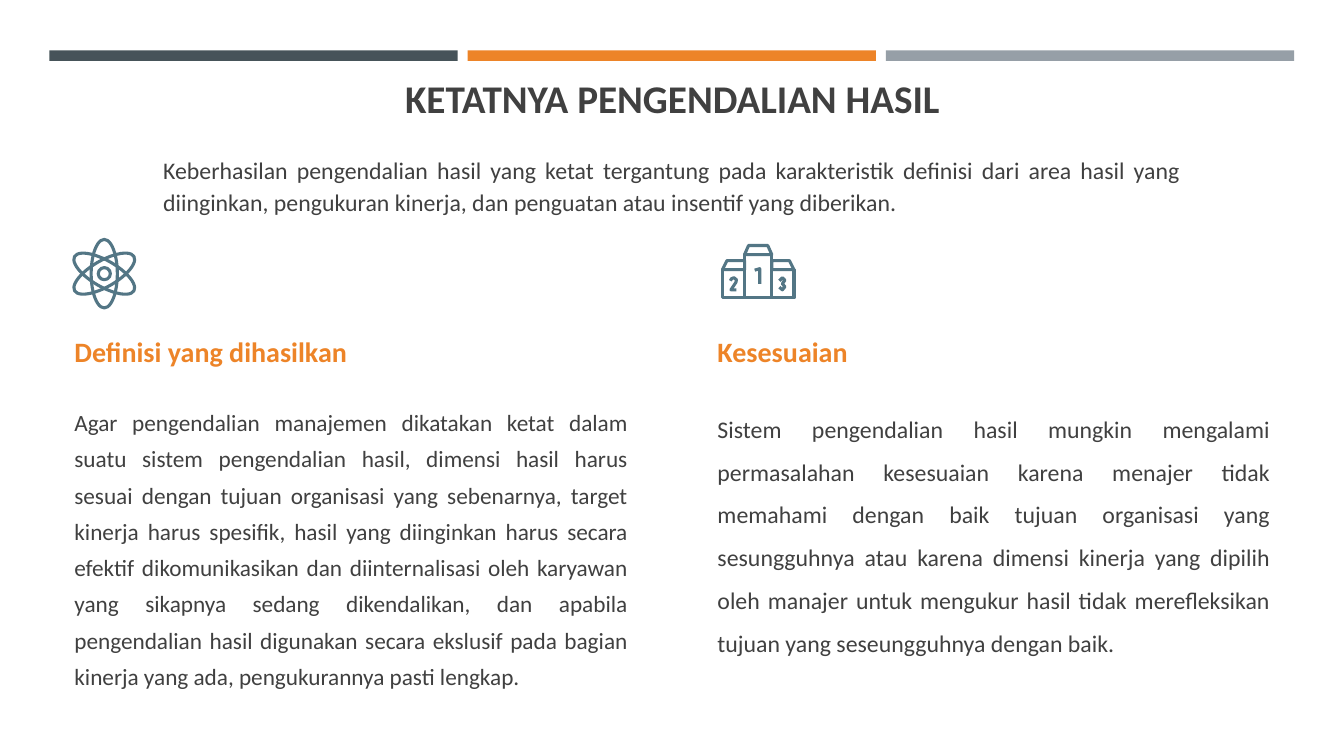
from typing import NamedTuple

from lxml.etree import SubElement
from pptx import Presentation
from pptx.dml.color import RGBColor
from pptx.enum.shapes import MSO_SHAPE as Preset
from pptx.enum.text import MSO_ANCHOR as Anchor, PP_ALIGN as Align
from pptx.oxml.ns import qn
from pptx.shapes.autoshape import Shape
from pptx.shapes.shapetree import GroupShapes, SlideShapes
from pptx.util import Emu, Inches, Pt

SLATE = RGBColor(0x46, 0x53, 0x59)
ORANGE = RGBColor(0xED, 0x84, 0x28)
GREY = RGBColor(0x96, 0x9F, 0xA7)
INK = RGBColor(0x40, 0x40, 0x40)
TEAL = RGBColor(0x53, 0x76, 0x85)

SLIDE_W, SLIDE_H = Inches(13.33), Inches(7.5)
COL, ROW = SLIDE_W / 100, SLIDE_H / 100
ICON_CELL = SLIDE_H / 750
ICON_STROKE = Pt(2.2)

BAR_LEFT, BAR_PITCH, BAR_WIDTH = 3.68, 31.12, 30.38
BAR_TOP, BAR_HEIGHT = 6.67, 1.4
MARGIN, COLUMN_PITCH, COLUMN_WIDTH = 4.8, 47.85, 42.6

HEADING_FORMAT = {"size": Pt(20), "bold": True}
Point = tuple[float, float]


class Area(NamedTuple):
    """A place on the slide, in columns and rows."""
    col: float
    row: float
    cols: float
    rows: float

    def emu(self) -> tuple[Emu, Emu, Emu, Emu]:
        return (Emu(round(self.col * COL)), Emu(round(self.row * ROW)),
                Emu(round(self.cols * COL)), Emu(round(self.rows * ROW)))


class Topic(NamedTuple):
    heading: str
    body: str
    size: float
    spacing: float


class Stroke(NamedTuple):
    """An outline of the podium icon, in icon cells."""
    points: list[Point]
    closed: bool


TOPICS = [
    Topic("Definisi yang dihasilkan",
          "Agar pengendalian manajemen dikatakan ketat dalam suatu sistem "
          "pengendalian hasil, dimensi hasil harus sesuai dengan tujuan organisasi "
          "yang sebenarnya, target kinerja harus spesifik, hasil yang diinginkan "
          "harus secara efektif dikomunikasikan dan diinternalisasi oleh karyawan "
          "yang sikapnya sedang dikendalikan, dan apabila pengendalian hasil "
          "digunakan secara ekslusif pada bagian kinerja yang ada, pengukurannya "
          "pasti lengkap.", 16.6, 1.3),
    Topic("Kesesuaian",
          "Sistem pengendalian hasil mungkin mengalami permasalahan kesesuaian "
          "karena menajer tidak memahami dengan baik tujuan organisasi yang "
          "sesungguhnya atau karena dimensi kinerja yang dipilih oleh manajer untuk "
          "mengukur hasil tidak merefleksikan tujuan yang seseungguhnya dengan baik.",
          17, 1.5),
]
INTRO = ("Keberhasilan pengendalian hasil yang ketat tergantung pada karakteristik "
         "definisi dari area hasil yang diinginkan, pengukuran kinerja, dan penguatan "
         "atau insentif yang diberikan.")


def box(left: float, top: float, right: float, bottom: float) -> Stroke:
    return Stroke([(left, top), (right, top), (right, bottom), (left, bottom)], True)


PODIUM = [
    box(0, 24, 22, 52), box(22, 9, 49, 52), box(49, 24, 71, 52),
    Stroke([(0, 24), (4.5, 15), (22, 15), (22, 24)], True),
    Stroke([(22, 9), (26, 0), (45, 0), (49, 9)], True),
    Stroke([(49, 15), (66.5, 15), (71, 24), (49, 24)], True),
    Stroke([(32, 24.5), (37, 23), (37, 38)], False),
    Stroke([(8, 35), (9, 33), (11.5, 32), (14, 34), (13.5, 36.5), (8.5, 44),
            (14, 44)], False),
    Stroke([(56.5, 35), (59.5, 32), (62, 34.5), (59.5, 38), (62, 41), (59.5, 44),
            (56.5, 41.5)], False),
]


def add_text(shapes: SlideShapes, area: Area, text: str, font: dict,
             color: RGBColor = INK, paragraph: dict | None = None,
             anchor: Anchor = Anchor.TOP) -> None:
    frame = shapes.add_textbox(*area.emu()).text_frame
    frame.word_wrap = True
    frame.vertical_anchor = anchor
    line = frame.paragraphs[0]
    for name, value in (paragraph or {}).items():
        setattr(line, name, value)
    run = line.add_run()
    run.text = text
    for name, value in ({"name": "Calibri"} | font).items():
        setattr(run.font, name, value)
    run.font.color.rgb = color


def add_bar(shapes: SlideShapes, index: int, color: RGBColor) -> None:
    area = Area(BAR_LEFT + index * BAR_PITCH, BAR_TOP, BAR_WIDTH, BAR_HEIGHT)
    bar = shapes.add_shape(Preset.RECTANGLE, *area.emu())
    bar.shadow.inherit = False
    bar.fill.solid()
    bar.fill.fore_color.rgb = color
    bar.line.fill.background()


def style_stroke(outline: Shape) -> None:
    outline.shadow.inherit = False
    outline.fill.background()
    outline.line.color.rgb = TEAL
    outline.line.width = ICON_STROKE
    SubElement(outline.line._get_or_add_ln(), qn("a:round"))


def add_podium(shapes: GroupShapes, col: float, row: float) -> None:
    for stroke in PODIUM:
        points = [(round(col * COL + x * ICON_CELL), round(row * ROW + y * ICON_CELL))
                  for x, y in stroke.points]
        builder = shapes.build_freeform(*points[0], scale=1.0)
        builder.add_line_segments(points[1:], close=stroke.closed)
        style_stroke(builder.convert_to_shape())


def add_atom(shapes: GroupShapes, col: float, row: float) -> None:
    """Draw three turned orbits and a nucleus around a centre."""
    for width, height, turn in [(26, 68, 0), (26, 68, 60), (26, 68, -60), (12, 12, 0)]:
        w, h = width * ICON_CELL, height * ICON_CELL
        orbit = shapes.add_shape(Preset.OVAL, round(col * COL - w / 2),
                                 round(row * ROW - h / 2), round(w), round(h))
        orbit.rotation = turn
        style_stroke(orbit)


def main() -> None:
    deck = Presentation()
    deck.slide_width, deck.slide_height = SLIDE_W, SLIDE_H
    shapes = deck.slides.add_slide(deck.slide_layouts[6]).shapes

    for index, color in enumerate([SLATE, ORANGE, GREY]):
        add_bar(shapes, index, color)
    add_text(shapes, Area(MARGIN, 8.53, 90.45, 8.13), "KETATNYA PENGENDALIAN HASIL",
             {"size": Pt(28), "bold": True}, paragraph={"alignment": Align.CENTER},
             anchor=Anchor.BOTTOM)

    for index, topic in enumerate(TOPICS):
        left = MARGIN + index * COLUMN_PITCH
        add_text(shapes, Area(left, 42.4, COLUMN_WIDTH, 8.13), topic.heading,
                 HEADING_FORMAT, ORANGE, anchor=Anchor.MIDDLE)
        add_text(shapes, Area(left, 52.27, COLUMN_WIDTH, 42.8), topic.body,
                 {"size": Pt(topic.size)},
                 paragraph={"alignment": Align.JUSTIFY, "line_spacing": topic.spacing})

    add_podium(shapes.add_group_shape().shapes, 53.75, 32.47)
    add_atom(shapes.add_group_shape().shapes, 7.76, 36.2)
    add_text(shapes, Area(11.4, 19.6, 77.18, 19.2), INTRO, {"size": Pt(17)},
             paragraph={"alignment": Align.JUSTIFY, "line_spacing": 1.1})
    deck.save("out.pptx")


if __name__ == "__main__":
    main()
